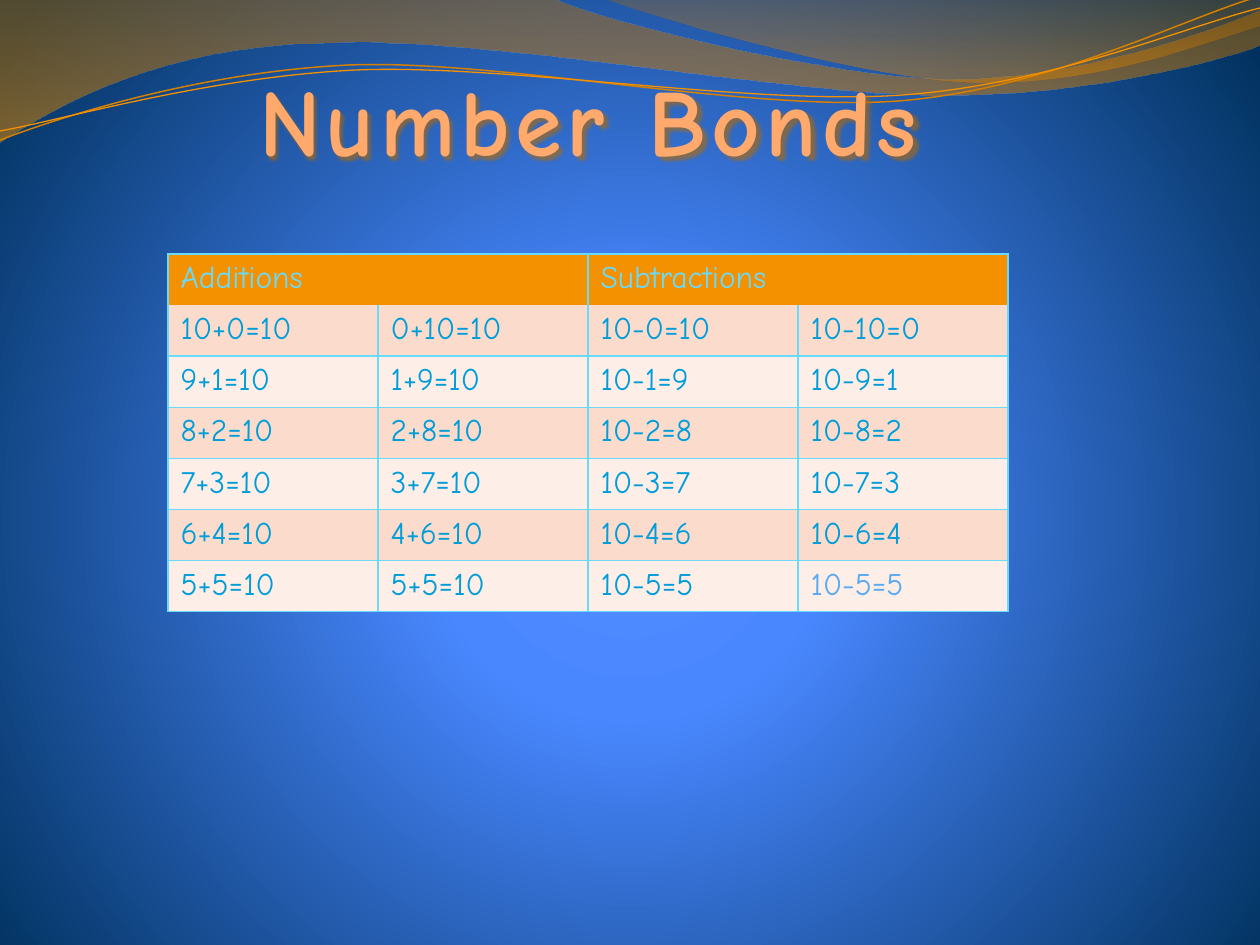
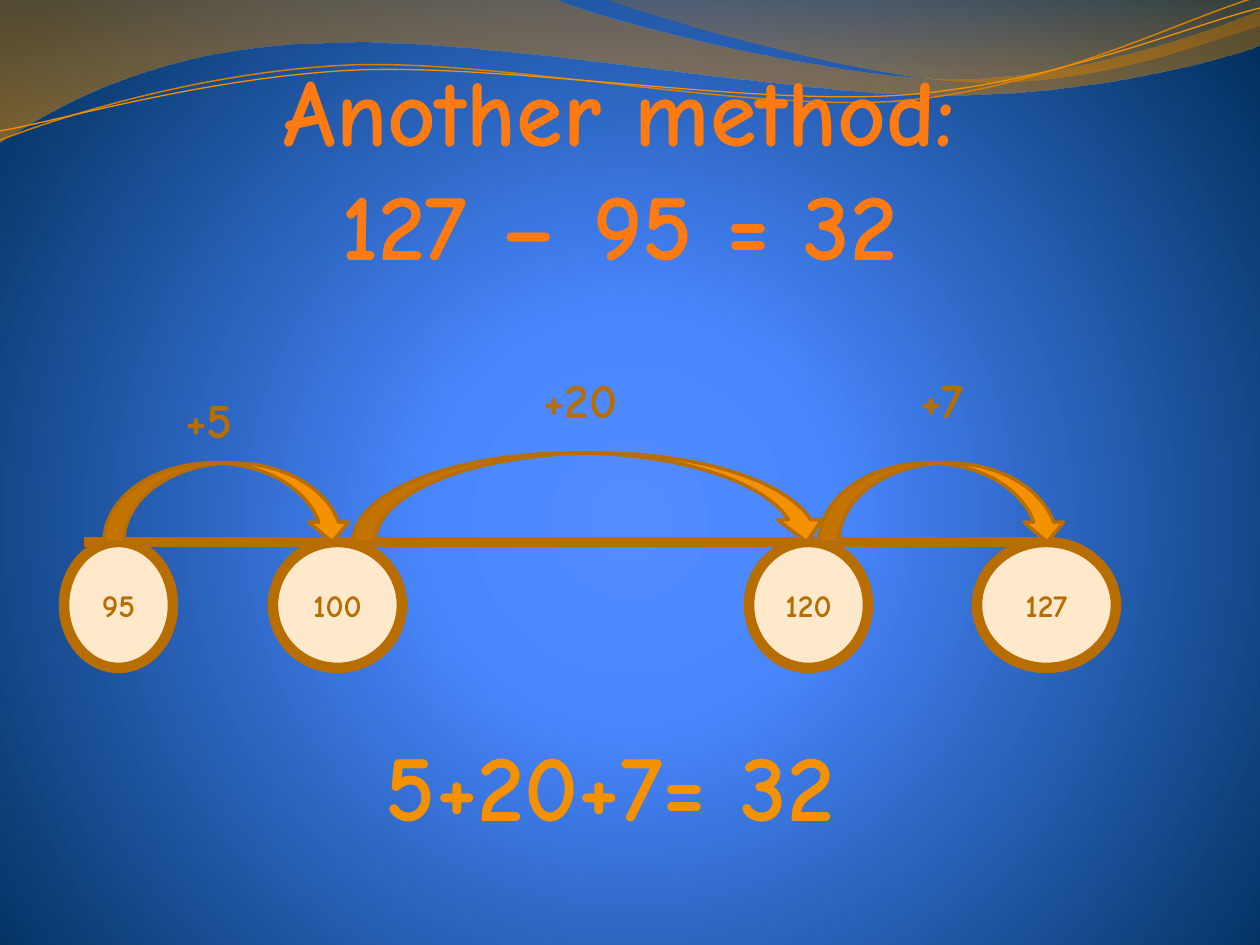
from lxml import etree
from pptx import Presentation
from pptx import util as u
from pptx.dml.color import RGBColor as Rgb
from pptx.enum import shapes, text
from pptx.oxml.ns import qn

S = 7257
FONT = "Comic Neue"
HUE = {
    "sky": "538CFF", "blue": "4987FF", "navy": "00315D",
    "brown": "B56B00", "ochre": "DD8400", "amber": "D78000",
    "orange": "F49100", "rust": "B76D00", "cream": "FFE9CA",
    "peach": "FFA96D", "light": "FFB98F", "vivid": "FF7A10",
    "rim": "FEF7F4", "edge": "6ADAFA", "cyan": "009DD9",
    "pale": "59AAF2", "odd": "FBDCCC", "even": "FDEEE7",
}


def grad(root, fill, stops, rect=None):
    fill.gradient()
    node = list(root.iter(qn("a:gradFill")))[-1]
    node[:] = []
    row = etree.SubElement(node, qn("a:gsLst"))
    for pos, hue, alpha in stops:
        stop = etree.SubElement(row, qn("a:gs"), pos=str(pos * 1000))
        tone = etree.SubElement(stop, qn("a:srgbClr"), val=HUE[hue])
        if alpha < 100:
            etree.SubElement(tone, qn("a:alpha"), val=str(alpha * 1000))
    if rect:
        way = etree.SubElement(node, qn("a:path"), path="circle")
        sides = {k: str(v * 1000) for k, v in zip("ltrb", rect)}
        etree.SubElement(way, qn("a:fillToRect"), **sides)
    else:
        etree.SubElement(node, qn("a:lin"), ang="5400000", scaled="0")
    return node


def write(frame, lines, size, hue=None, bold=True, align=None):
    runs = []
    for i, line in enumerate(lines):
        para = frame.add_paragraph() if i else frame.paragraphs[0]
        para.alignment = align
        run = para.add_run()
        run.text = line
        run.font.name = FONT
        run.font.size = u.Pt(size)
        run.font.bold = bold
        if hue:
            run.font.fill.solid()
            run.font.fill.fore_color.rgb = Rgb.from_string(HUE[hue])
        runs.append(run)
    return runs


prs = Presentation()
prs.slide_width, prs.slide_height = u.Inches(10), u.Inches(7.5)
blank = prs.slide_layouts[6]
master = prs.slide_master
bonds = prs.slides.add_slide(blank)
jumps = prs.slides.add_slide(blank)
mid = text.PP_ALIGN.CENTER

grad(master.element, master.background.fill,
     [(0, "sky", 100), (25, "blue", 100), (100, "navy", 100)], (10, 110, 10, 100))

waves = [
    ([(0, 0), (554, -1), (600, 21, 837, 79, 955, 79), (1075, 79, 1207, 33, 1260, 11),
      (1261, 45), (1239, 55, 1096, 96, 940, 95), (784, 95, 481, 35, 324, 43),
      (163, 45, 58, 105, -1, 142), (0, 0)],
     [(0, "brown", 45), (100, "ochre", 55)], None, 0),
    ([(604, -1), (641, 14, 859, 78, 969, 82), (1097, 87, 1211, 40, 1260, 26),
      (1260, 0), (604, -1)],
     [(0, "brown", 30), (80, "amber", 45)], None, 0),
    ([(0, 140), (60, 117, 199, 72, 349, 65), (498, 59, 747, 112, 898, 101),
      (1049, 89, 1182, 19, 1257, -3)], None, "amber", 0.85),
    ([(0, 131), (59, 121, 207, 77, 357, 70), (508, 64, 752, 106, 903, 95),
      (1053, 84, 1187, 26, 1260, 8)], None, "orange", 0.75),
]
for i, (track, stops, hue, width) in enumerate(waves):
    dots = [(seg[k] * S, seg[k + 1] * S) for seg in track for k in range(0, len(seg), 2)]
    pen = bonds.shapes.build_freeform(*dots[0])
    pen.add_line_segments(dots[1:], close=bool(stops))
    wave = pen.convert_to_shape()
    legs = iter(list(wave.element.iter(qn("a:lnTo"))))
    for seg in track[1:]:
        leg = next(legs)
        if len(seg) == 6:
            leg.addprevious(bend := etree.Element(qn("a:cubicBezTo")))
            for part in (leg, next(legs), next(legs)):
                bend.append(part[0])
                part.getparent().remove(part)
    wave.shadow.inherit = False
    if stops:
        grad(wave.element, wave.fill, stops)
        wave.line.fill.background()
    else:
        wave.fill.background()
        wave.line.color.rgb = Rgb.from_string(HUE[hue])
        wave.line.width = u.Pt(width)
    wave.element.nvSpPr.cNvPr.set("id", str(20 + i))
    master.element.cSld.spTree.append(wave.element)

grid = bonds.shapes.add_table(7, 4, 168 * S, 254 * S, 840 * S, 358 * S).table
grid.first_row = grid.horz_banding = False
rows = [["Additions", "", "Subtractions", ""]]
rows += [[f"{10 - n}+{n}=10", f"{n}+{10 - n}=10", f"10-{n}={10 - n}", f"10-{10 - n}={n}"]
         for n in range(6)]
for r, row in enumerate(rows):
    for c, word in enumerate(row):
        cell = grid.cell(r, c)
        if r == 0 and c % 2 == 0:
            cell.merge(grid.cell(0, c + 1))
        ink = "edge" if r == 0 else "pale" if (r, c) == (6, 3) else "cyan"
        if word:
            write(cell.text_frame, [word], 18, ink, False)
        prop = cell._tc.get_or_add_tcPr()
        for side in "LRTB":
            line = etree.SubElement(prop, qn("a:ln" + side), w="12700")
            if (r, side) in ((0, "B"), (1, "T")):
                etree.SubElement(line, qn("a:noFill"))
            else:
                tint = etree.SubElement(line, qn("a:solidFill"))
                etree.SubElement(tint, qn("a:srgbClr"), val=HUE["edge"])
        cell.fill.solid()
        back = "orange" if r == 0 else "odd" if r % 2 else "even"
        cell.fill.fore_color.rgb = Rgb.from_string(HUE[back])

rail = jumps.shapes.add_connector(
    shapes.MSO_CONNECTOR.STRAIGHT, 84 * S, 542 * S, 1047 * S, 542 * S)
rail.line.color.rgb = Rgb.from_string(HUE["rust"])
rail.line.width = u.Pt(6)
etree.SubElement(rail.element.spPr, qn("a:effectLst"))

oval, arc = shapes.MSO_SHAPE.OVAL, shapes.MSO_SHAPE.CURVED_DOWN_ARROW
marks = [
    (oval, 64, 542, 109, 126, "95"), (oval, 273, 542, 129, 126, "100"),
    (oval, 749, 542, 119, 126, "120"), (oval, 977, 542, 139, 126, "127"),
    (arc, 104, 463, 248, 79, ""), (arc, 353, 453, 476, 89, ""),
    (arc, 819, 463, 248, 79, ""),
]
for kind, x, y, w, h, word in marks:
    mark = jumps.shapes.add_shape(kind, x * S, y * S, w * S, h * S)
    mark.shadow.inherit = False
    mark.fill.solid()
    mark.fill.fore_color.rgb = Rgb.from_string(HUE["cream" if word else "orange"])
    mark.line.color.rgb = Rgb.from_string(HUE["rust"])
    mark.line.width = u.Pt(6 if word else 2)
    if word:
        mark.text_frame.vertical_anchor = text.MSO_ANCHOR.MIDDLE
        write(mark.text_frame, [word], 18, "rust", align=mid)
    if word == "127":
        rail.end_connect(mark, 0)

warm = [(0, "light", 100), (75, "vivid", 100), (100, "brown", 100)]
glow = [(10, "peach", 100), (75, "brown", 100)]
notes = [
    (bonds, 213, 56, 751, 127, ["Number Bonds"], 54, None, glow),
    (jumps, 173, 383, 118, 72, ["+5"], 28, "rust", None),
    (jumps, 531, 363, 118, 72, ["+20"], 28, "rust", None),
    (jumps, 908, 363, 118, 72, ["+7"], 28, "rust", None),
    (jumps, 214, 46, 811, 242, ["Another method:", "127 – 95 = 32"], 54, None, warm),
    (jumps, 314, 721, 592, 127, ["5+20+7= 32"], 54, "orange", None),
]
for slide, x, y, w, h, lines, size, hue, stops in notes:
    box = slide.shapes.add_textbox(x * S, y * S, w * S, h * S)
    frame = box.text_frame
    frame.word_wrap = size == 28
    frame.auto_size = text.MSO_AUTO_SIZE.SHAPE_TO_FIT_TEXT
    for run in write(frame, lines, size, hue, align=mid if size == 54 else None):
        if not stops:
            continue
        node = grad(box.element, run.font.fill, stops)
        if slide is bonds:
            prop = node.getparent()
            prop.set("spc", "300")
            rim = etree.Element(qn("a:ln"), w="11430")
            tint = etree.SubElement(rim, qn("a:solidFill"))
            etree.SubElement(tint, qn("a:srgbClr"), val=HUE["rim"])
            prop.insert(0, rim)
            fx = etree.SubElement(box.element.spPr, qn("a:effectLst"))
            shade = etree.SubElement(
                fx, qn("a:outerShdw"), blurRad="12700", dist="25400", dir="2700000")
            tone = etree.SubElement(shade, qn("a:srgbClr"), val=HUE["brown"])
            etree.SubElement(tone, qn("a:alpha"), val="60000")

prs.save("out.pptx")
